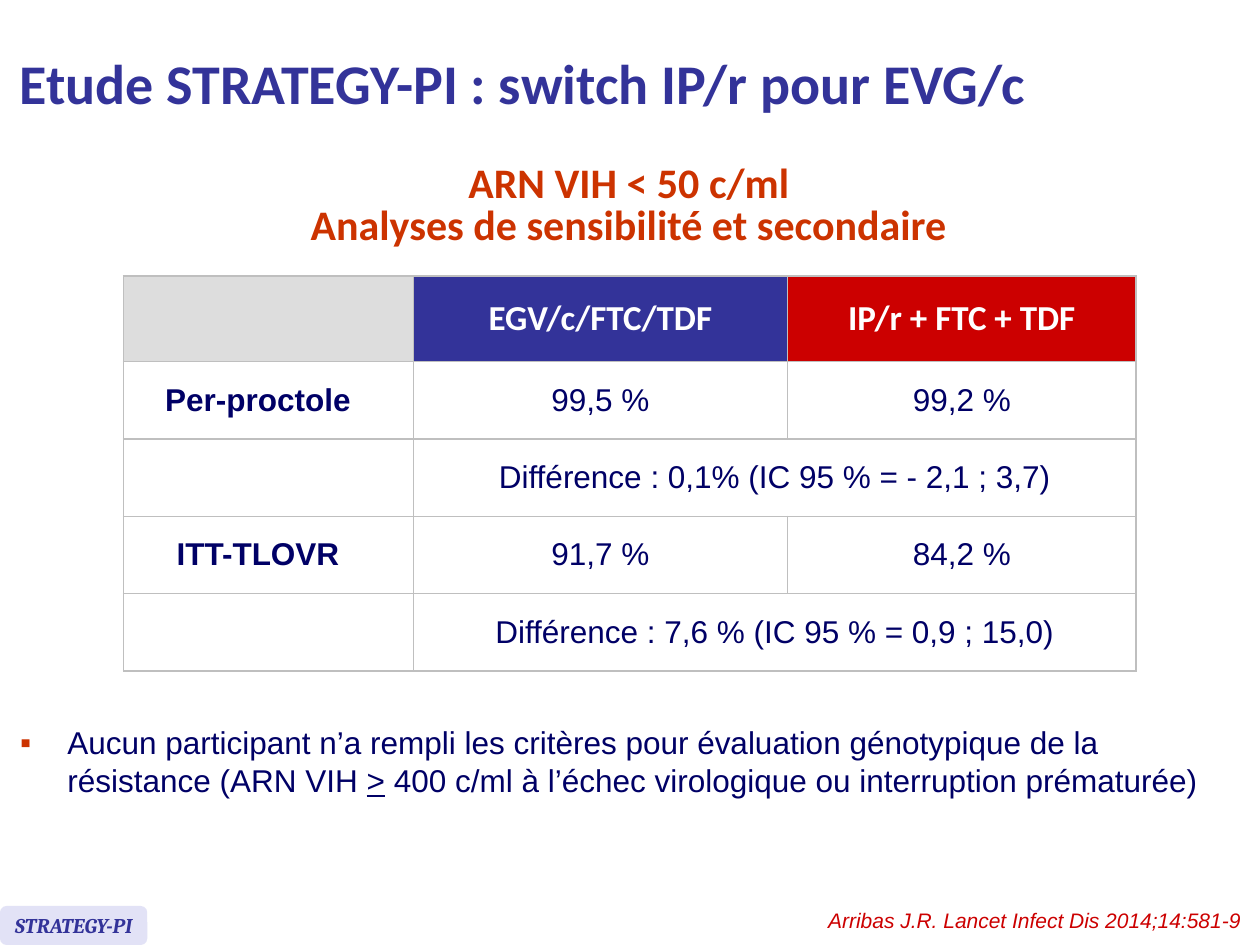
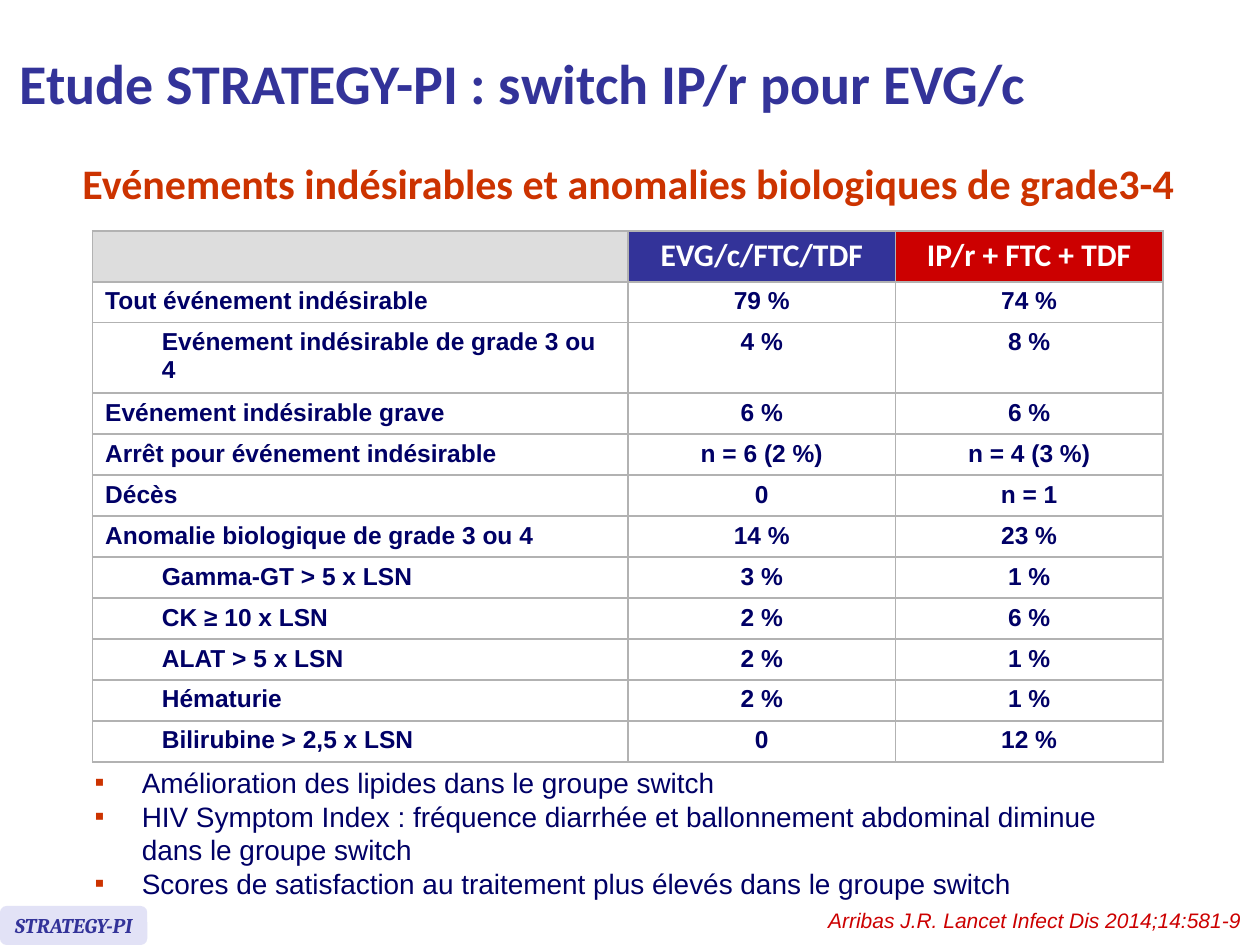
from lxml import etree
from pptx import Presentation
from pptx.dml.color import RGBColor
from pptx.enum import shapes, text
from pptx.oxml import ns
from pptx.util import Pt

NAVY, INDIGO, RED, ORANGE = "000066", "333399", "CC0000", "CC3300"
LAVENDER, GREY, WHITE = "E2E2F6", "DDDDDD", "FFFFFF"
LEFT, CENTER, RIGHT = text.PP_ALIGN.LEFT, text.PP_ALIGN.CENTER, text.PP_ALIGN.RIGHT
TOP, MIDDLE = text.MSO_ANCHOR.TOP, text.MSO_ANCHOR.MIDDLE


def style(paragraph, size, face, color, align=LEFT, bold=False, italic=False):
    paragraph.alignment = align
    font = paragraph.font
    font.size, font.name, font.bold, font.italic = Pt(size), face, bold, italic
    font.color.rgb = RGBColor.from_string(color)


def add_xml(parent, tag, index=None, **attributes):
    """Add a DrawingML child at the end, or at index."""
    child = etree.Element(ns.qn(tag), **attributes)
    parent.insert(len(parent) if index is None else index, child)
    return child


# In the rows, None continues the cell on its left.
pages = [
    dict(
        subtitle="ARN VIH < 50 c/ml\vAnalyses de sensibilité et secondaire",
        subtitle_box=(165.6, 90.7, 387.4, 57), subtitle_pitch=24,
        grid_at=(70.6, 157.7), widths=(165.6, 213.8, 199.2), heights=(49, 44.2),
        sizes=(20, 18), border="BFBFBF", insets=(12, 5.8), anchor=MIDDLE,
        left_columns=0, bold_columns=1, indented=False,
        rows=[
            ("", "EGV/c/FTC/TDF", "IP/r + FTC + TDF"),
            ("Per-proctole", "99,5 %", "99,2 %"),
            ("", "Différence : 0,1% (IC 95 % = - 2,1 ; 3,7)", None),
            ("ITT-TLOVR", "91,7 %", "84,2 %"),
            ("", "Différence : 7,6 % (IC 95 % = 0,9 ; 15,0)", None),
        ],
        findings_box=(4.3, 409.7, 710.6, 46.8), findings_size=18,
        findings=[("Aucun participant n’a rempli les critères pour évaluation "
                   "génotypique de la résistance (ARN VIH ", ">",
                   " 400 c/ml à l’échec virologique ou interruption prématurée)")],
    ),
    dict(
        subtitle="Evénements indésirables et anomalies biologiques de grade3-4",
        subtitle_box=(36.7, 86.4, 645, 36), subtitle_pitch=None,
        grid_at=(52.9, 132), widths=(32.4, 273.6, 152.8, 152.8), heights=(29, 23.3),
        sizes=(18, 14), border="B2B2B2", insets=(7.2, 3.3), anchor=TOP,
        left_columns=2, bold_columns=4, indented=True,
        rows=[
            ("", None, "EVG/c/FTC/TDF", "IP/r + FTC + TDF"),
            ("Tout événement indésirable", None, "79 %", "74 %"),
            ("", "Evénement indésirable de grade 3 ou 4", "4 %", "8 %"),
            ("Evénement indésirable grave", None, "6 %", "6 %"),
            ("Arrêt pour événement indésirable", None, "n = 6 (2 %)", "n = 4 (3 %)"),
            ("Décès", None, "0", "n = 1"),
            ("Anomalie biologique de grade 3 ou 4", None, "14 %", "23 %"),
            ("", "Gamma-GT > 5 x LSN", "3 %", "1 %"),
            ("", "CK ≥ 10 x LSN", "2 %", "6 %"),
            ("", "ALAT > 5 x LSN", "2 %", "1 %"),
            ("", "Hématurie", "2 %", "1 %"),
            ("", "Bilirubine > 2,5 x LSN", "0", "12 %"),
        ],
        findings_box=(46.8, 433.8, 614.2, 91.4), findings_size=16,
        findings=[
            ("Amélioration des lipides dans le groupe switch",),
            ("HIV Symptom Index : fréquence diarrhée et ballonnement abdominal "
             "diminue dans le groupe switch",),
            ("Scores de satisfaction au traitement plus élevés dans le groupe switch",),
        ],
    ),
]

prs = Presentation()
prs.slide_width, prs.slide_height = Pt(720), Pt(540)

for page in pages:
    slide = prs.slides.add_slide(prs.slide_layouts[1])
    title, findings = slide.placeholders

    title.left, title.top, title.width, title.height = Pt(4), Pt(3.6), Pt(645), Pt(87)
    title.text_frame.text = "Etude STRATEGY-PI : switch IP/r pour EVG/c"
    title.text_frame.vertical_anchor = MIDDLE
    title.text_frame.auto_size = text.MSO_AUTO_SIZE.NONE
    style(title.text_frame.paragraphs[0], 32, "Calibri", INDIGO, bold=True)

    subtitle = slide.shapes.add_textbox(*map(Pt, page["subtitle_box"])).text_frame
    subtitle.word_wrap = False
    subtitle.text = page["subtitle"]
    style(subtitle.paragraphs[0], 24, "Calibri", ORANGE, CENTER, bold=True)
    if page["subtitle_pitch"]:
        subtitle.paragraphs[0].line_spacing = Pt(page["subtitle_pitch"])

    # Results table
    rows, widths = page["rows"], page["widths"]
    header_height, row_height = page["heights"]
    results = slide.shapes.add_table(
        len(rows), len(widths), *map(Pt, page["grid_at"]), Pt(sum(widths)),
        Pt(header_height + row_height * (len(rows) - 1))).table
    results.first_row = results.horz_banding = False
    for column, width in zip(results.columns, widths):
        column.width = Pt(width)
    header_fills = [GREY] * (len(widths) - 2) + [INDIGO, RED]
    side_inset, end_inset = page["insets"]

    for r, row in enumerate(rows):
        results.rows[r].height = Pt(row_height if r else header_height)
        size = page["sizes"][min(r, 1)]
        indented_row = page["indented"] and row[0] == "" and row[1] is not None
        for c, words in enumerate(row):
            cell = results.cell(r, c)
            cell.fill.solid()
            cell.fill.fore_color.rgb = RGBColor.from_string(WHITE if r else header_fills[c])
            cell.vertical_anchor = page["anchor"]
            cell.margin_left = Pt(0 if c == 0 and not page["indented"] else side_inset)
            cell.margin_right = Pt(side_inset)
            cell.margin_top = cell.margin_bottom = Pt(end_inset if words else 0)
            open_side = {0: "a:lnR", 1: "a:lnL"}.get(c) if indented_row else None
            for i, side in enumerate(("a:lnL", "a:lnR", "a:lnT", "a:lnB")):
                line = add_xml(cell._tc.get_or_add_tcPr(), side, i, w=str(Pt(1)))
                if side == open_side:
                    add_xml(line, "a:noFill")
                else:
                    add_xml(add_xml(line, "a:solidFill"), "a:srgbClr", val=page["border"])
            paragraph = cell.text_frame.paragraphs[0]
            if words:
                paragraph.text = words
                style(paragraph, size, "Arial" if r else "Calibri", NAVY if r else WHITE,
                      LEFT if r and c < page["left_columns"] else CENTER,
                      bold=r == 0 or c < page["bold_columns"])
            else:
                # Keeps an empty cell from stretching its row
                add_xml(paragraph._p, "a:endParaRPr", sz=str(size * 100))
            if words is None:
                results.cell(r, c - 1).merge(cell)

    # Bulleted findings
    findings.left, findings.top, findings.width, findings.height = map(Pt, page["findings_box"])
    frame = findings.text_frame
    frame.auto_size = text.MSO_AUTO_SIZE.NONE
    for i, pieces in enumerate(page["findings"]):
        finding = frame.add_paragraph() if i else frame.paragraphs[0]
        for piece in pieces:
            run = finding.add_run()
            run.text = piece
            if piece == ">":
                run.font.underline = True
        finding.space_before = Pt(0)
        properties = finding._p.get_or_add_pPr()
        properties.set("marL", str(Pt(27)))
        properties.set("indent", str(-Pt(27)))
        add_xml(add_xml(properties, "a:buClr"), "a:srgbClr", val=ORANGE)
        add_xml(properties, "a:buChar", char="▪")
        style(finding, page["findings_size"], "Arial", NAVY)

    # Footer: reference and study tag
    reference = slide.shapes.add_textbox(Pt(437.8), Pt(514.8), Pt(278.6), Pt(21.6)).text_frame
    reference.word_wrap = True
    reference.text = "Arribas J.R. Lancet Infect Dis 2014;14:581-9"
    style(reference.paragraphs[0], 12, "Arial", RED, RIGHT, italic=True)

    tag = slide.shapes.add_shape(
        shapes.MSO_SHAPE.ROUNDED_RECTANGLE, Pt(0), Pt(517.7), Pt(84.2), Pt(22.3))
    tag.shadow.inherit = False
    tag.fill.solid()
    tag.fill.fore_color.rgb = RGBColor.from_string(LAVENDER)
    tag.line.fill.background()
    tag.text_frame.word_wrap = False
    tag.text_frame.vertical_anchor = MIDDLE
    tag.text_frame.text = "STRATEGY-PI"
    style(tag.text_frame.paragraphs[0], 12, "Cambria", INDIGO, CENTER, bold=True, italic=True)

prs.save("out.pptx")
